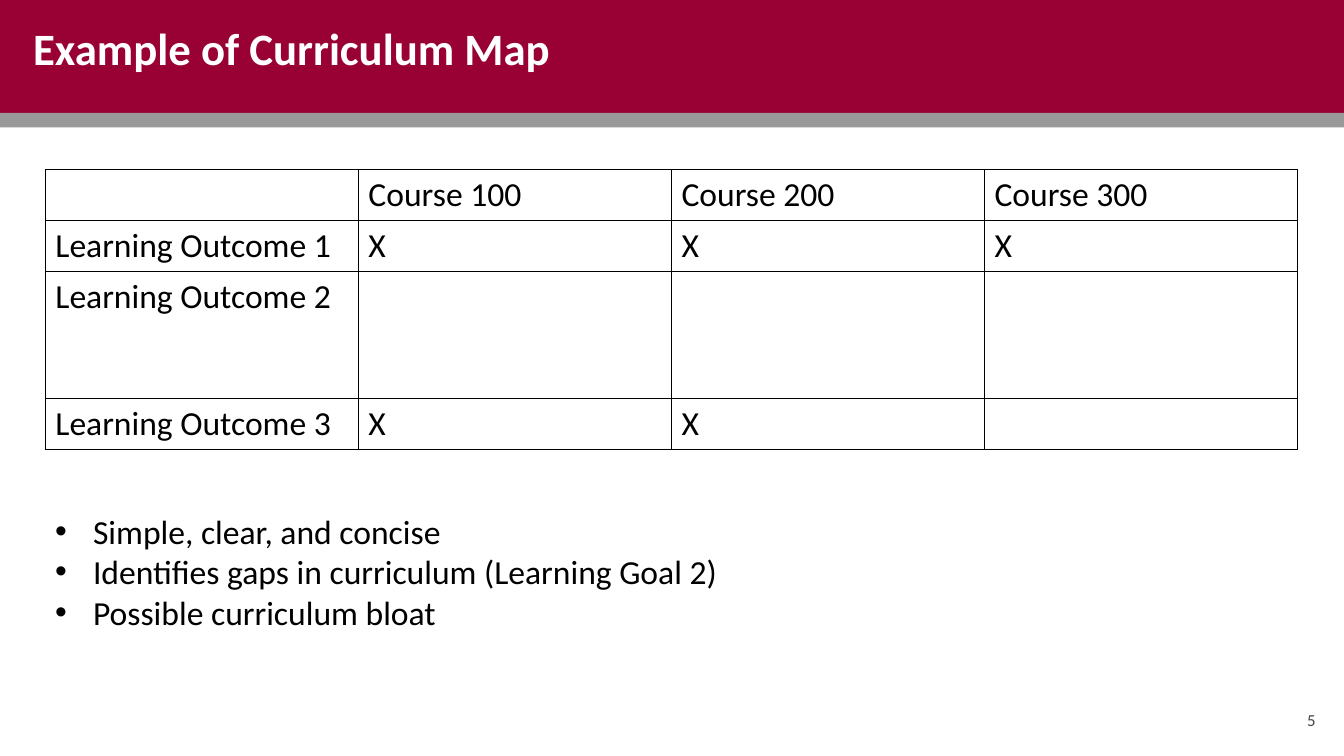
import pptx
import pptx.util
import pptx.dml.color
import pptx.enum.shapes
import pptx.enum.text
import pptx.oxml
import pptx.oxml.ns

Pt = pptx.util.Pt
ANCHOR = pptx.enum.text.MSO_ANCHOR
ALIGN = pptx.enum.text.PP_ALIGN
NAMESPACE = pptx.oxml.ns.nsdecls("a")

PAGE_WIDTH, PAGE_HEIGHT = 960, 540
MARGIN = 32.4
CONTENT_WIDTH = 894.4

COURSES = ["Course 100", "Course 200", "Course 300"]
OUTCOMES = [
    ("Learning Outcome 1", "XXX"),
    ("Learning Outcome 2", ""),
    ("Learning Outcome 3", "XX"),
]
ROW_HEIGHTS = [36.4, 36.4, 90.8, 36.4]
REMARKS = [
    "Simple, clear, and concise",
    "Identifies gaps in curriculum (Learning Goal 2)",
    "Possible curriculum bloat",
]


def color(value):
    return pptx.dml.color.RGBColor.from_string(value)


def add_span(para, text, size, ink="000000", bold=False):
    span = para.add_run()
    span.text = text
    span.font.name = "Calibri"
    span.font.size = Pt(size)
    span.font.bold = bold
    span.font.color.rgb = color(ink)


def add_text_frame(page, left, top, width, height, inset=7.2, anchor=ANCHOR.TOP):
    box = page.shapes.add_textbox(Pt(left), Pt(top), Pt(width), Pt(height))
    frame = box.text_frame
    frame.word_wrap = True
    frame.vertical_anchor = anchor
    frame.margin_left = frame.margin_right = Pt(7.2)
    frame.margin_top = frame.margin_bottom = Pt(inset)
    return frame


def add_header(page, left, top, width, height):
    # Crimson band with a grey strip below it
    strip_height = 10.4
    bands = [("990033", top, height - strip_height),
             ("999999", top + height - strip_height, strip_height)]
    for fill, band_top, band_height in bands:
        band = page.shapes.add_shape(
            pptx.enum.shapes.MSO_SHAPE.RECTANGLE,
            Pt(left), Pt(band_top), Pt(width), Pt(band_height))
        band.shadow.inherit = False
        band.fill.solid()
        band.fill.fore_color.rgb = color(fill)
        band.line.fill.background()
    # Title
    frame = add_text_frame(page, left + 16.6, top + 7.9, CONTENT_WIDTH, 60.5)
    add_span(frame.paragraphs[0], "Example of Curriculum Map", 32, "FFFFFF", True)


def add_borders(cell):
    properties = cell._tc.get_or_add_tcPr()
    for position, side in enumerate(("lnL", "lnR", "lnT", "lnB")):
        properties.insert(position, pptx.oxml.parse_xml(
            f'<a:{side} {NAMESPACE} w="{Pt(1)}"><a:solidFill>'
            f'<a:srgbClr val="000000"/></a:solidFill></a:{side}>'))


def add_curriculum_map(page, left, top, width):
    rows = [[""] + COURSES]
    rows += [[outcome] + list(marks.ljust(len(COURSES)))
             for outcome, marks in OUTCOMES]
    table = page.shapes.add_table(
        len(rows), len(rows[0]), Pt(left), Pt(top),
        Pt(width), Pt(sum(ROW_HEIGHTS))).table
    table.first_row = table.horz_banding = False
    for column in table.columns:
        column.width = Pt(width / len(rows[0]))
    for row_index, texts in enumerate(rows):
        table.rows[row_index].height = Pt(ROW_HEIGHTS[row_index])
        for column_index, text in enumerate(texts):
            cell = table.cell(row_index, column_index)
            cell.fill.background()
            add_borders(cell)
            if text.strip():
                add_span(cell.text_frame.paragraphs[0], text, 24)


def add_remarks(page, left, top, width, height):
    frame = add_text_frame(page, left, top, width, height, inset=3.6)
    for index, remark in enumerate(REMARKS):
        para = frame.add_paragraph() if index else frame.paragraphs[0]
        properties = para._p.get_or_add_pPr()
        properties.set("marL", str(Pt(27)))
        properties.set("indent", str(-Pt(27)))
        properties.append(pptx.oxml.parse_xml(
            f'<a:buFont {NAMESPACE} typeface="Arial"/>'))
        properties.append(pptx.oxml.parse_xml(f'<a:buChar {NAMESPACE} char="•"/>'))
        add_span(para, remark, 24)


def add_page_number(page, left, top, width, height):
    frame = add_text_frame(page, left, top, width, height, anchor=ANCHOR.MIDDLE)
    para = frame.paragraphs[0]
    para.alignment = ALIGN.RIGHT
    add_span(para, "5", 12, "434343")


def main():
    deck = pptx.Presentation()
    deck.slide_width, deck.slide_height = Pt(PAGE_WIDTH), Pt(PAGE_HEIGHT)
    page = deck.slides.add_slide(deck.slide_layouts[6])
    add_header(page, 0, 0, PAGE_WIDTH, 91)
    add_curriculum_map(page, MARGIN, 121, CONTENT_WIDTH)
    add_page_number(page, 889.2, 498.2, 57.6, 32.4)
    add_remarks(page, MARGIN, 361.4, CONTENT_WIDTH, 94.4)
    deck.save("out.pptx")


if __name__ == "__main__":
    main()
